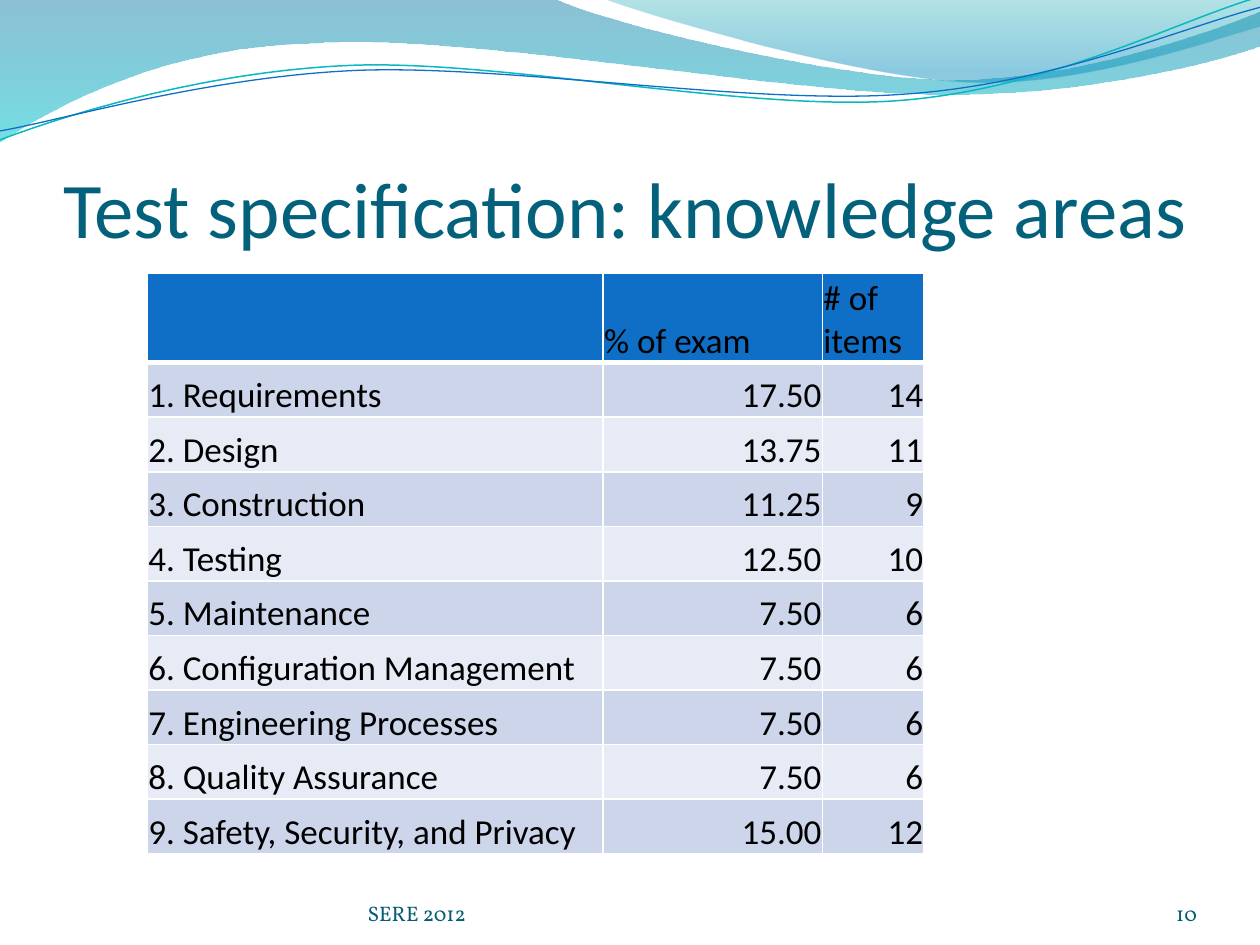
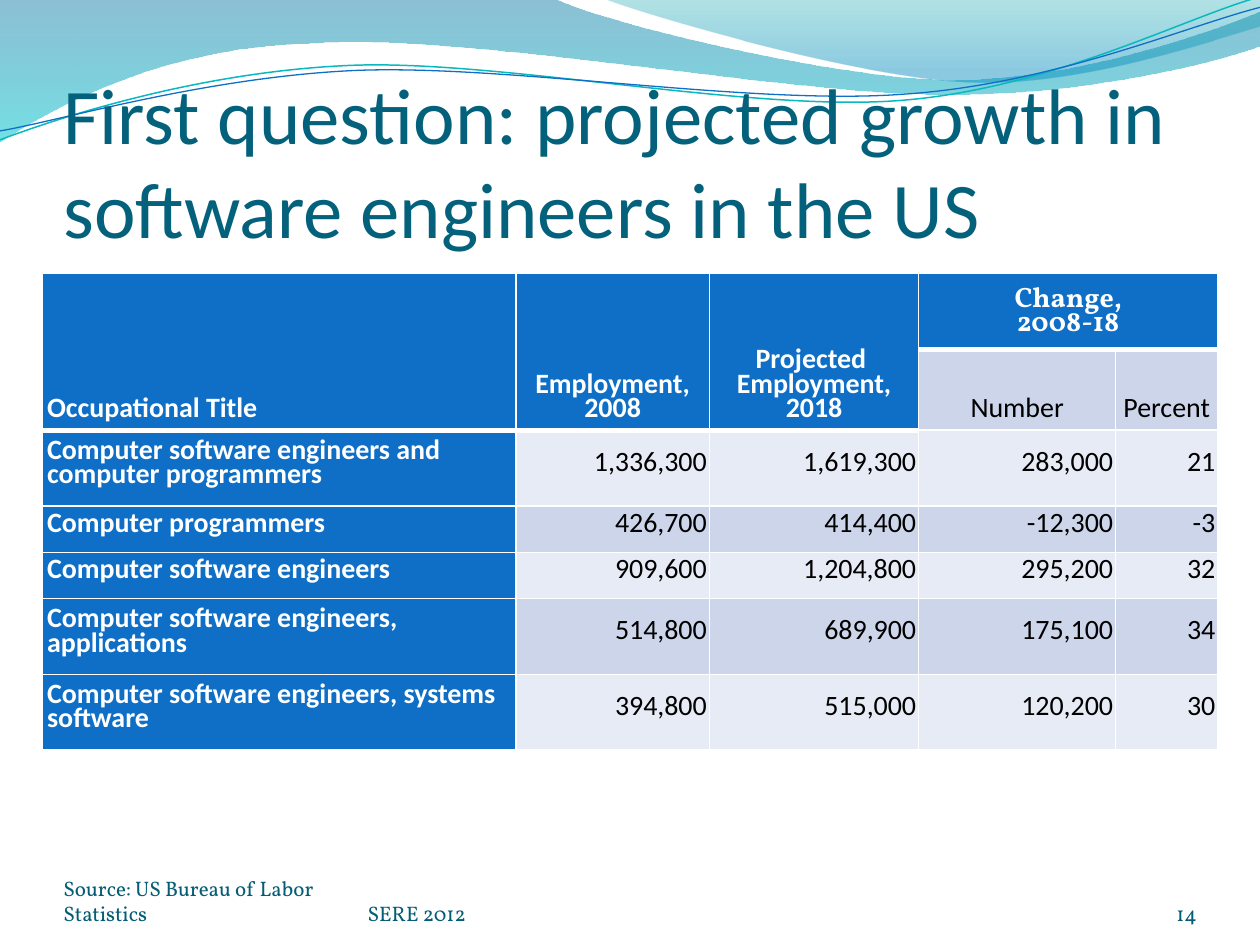
"""Build two exam slides: knowledge areas and projected job growth."""
import dataclasses

import lxml.etree
import pptx
import pptx.dml.color
import pptx.enum.text
import pptx.oxml.ns
import pptx.util

Cm, Pt = pptx.util.Cm, pptx.util.Pt
RGB = pptx.dml.color.RGBColor.from_string
ALIGN, ANCHOR = pptx.enum.text.PP_ALIGN, pptx.enum.text.MSO_ANCHOR
qn = pptx.oxml.ns.qn


@dataclasses.dataclass(frozen=True)
class Theme:
    sans: str = "Calibri"
    serif: str = "Vollkorn"
    title: str = "04617B"
    footer: str = "045D75"
    header: str = "0F6FC6"
    odd_band: str = "CCD5EA"
    even_band: str = "E7EBF5"
    teal: str = "0AB8BF"
    white: str = "FFFFFF"
    black: str = "000000"
    title_size: int = 45
    footer_size: int = 12


theme = Theme()


def write(frame, text, font, size, color, align=ALIGN.LEFT, bold=False):
    paragraph = frame.paragraphs[0]
    paragraph.text = text
    paragraph.alignment = align
    for run in paragraph.runs:
        run.font.name = font
        run.font.size = Pt(size)
        run.font.bold = bold
        run.font.color.rgb = RGB(color)
    return paragraph


def trace(slide, start, steps, closed):
    builder = slide.shapes.build_freeform(Cm(start[0]), Cm(start[1]))
    for step in steps:
        builder.add_line_segments([(Cm(x), Cm(y)) for x, y in zip(step[::2], step[1::2])], close=False)
    if closed:
        builder.add_line_segments([], close=True)
    outline = builder.convert_to_shape()
    outline.shadow.inherit = False
    segments = iter(list(outline._element.iter(qn("a:lnTo"))))
    for step in steps:
        segment = next(segments)
        if len(step) == 6:
            curve = lxml.etree.Element(qn("a:cubicBezTo"))
            segment.addprevious(curve)
            for part in (segment, next(segments), next(segments)):
                curve.append(part[0])
                part.getparent().remove(part)
    return outline


waves = [
    ((0, 0), [(11.18, -0.03), (12.09, 0.43, 16.87, 1.6, 19.25, 1.6),
              (21.67, 1.6, 24.33, 0.66, 25.4, 0.23), (25.43, 0.91),
              (24.97, 1.12, 22.1, 1.93, 18.95, 1.9), (15.8, 1.9, 9.7, 0.71, 6.53, 0.86),
              (3.28, 0.91, 1.17, 2.11, -0.03, 2.87), (0, 0)],
     [(0, "0074A1", 45), (1, "00C6CF", 55)]),
    ((12.17, -0.03), [(12.93, 0.28, 17.32, 1.57, 19.53, 1.65),
                      (21.74, 1.75, 24.41, 0.81, 25.4, 0.53), (25.4, 0), (12.17, -0.03)],
     [(0, "00A1A9", 30), (0.8, "008BBF", 45)]),
]
ripples = [
    ((0, 2.82), [(1.22, 2.36, 4.01, 1.45, 7.04, 1.32), (10.03, 1.19, 15.06, 2.26, 18.11, 2.03),
                 (21.16, 1.8, 23.83, 0.38, 25.35, -0.05)], theme.teal, 0.85),
    ((0, 2.64), [(1.19, 2.44, 4.17, 1.55, 7.19, 1.42), (10.24, 1.3, 15.16, 2.13, 18.21, 1.9),
                 (21.23, 1.7, 23.9, 0.53, 25.4, 0.15)], theme.header, 0.75),
]

knowledge_areas = dict(
    title="Test specification: knowledge areas", source="", number="10",
    left=2.97, columns=[9.19, 4.42, 2.05], heights=[1.8] + [1.1] * 9,
    size=20, spaced=False, titled_rows=False, merges=[],
    header_align=ALIGN.LEFT, body_anchor=ANCHOR.BOTTOM,
    label_insets=(0.02, 0.02, 0.02, 0), value_insets=(0.02, 0.02, 0.02, 0),
    rows=[
        ("", "% of exam", "# of items"),
        ("1. Requirements", "17.50", "14"),
        ("2. Design", "13.75", "11"),
        ("3. Construction", "11.25", "9"),
        ("4. Testing", "12.50", "10"),
        ("5. Maintenance", "7.50", "6"),
        ("6. Configuration Management", "7.50", "6"),
        ("7. Engineering Processes", "7.50", "6"),
        ("8. Quality Assurance", "7.50", "6"),
        ("9. Safety, Security, and Privacy", "15.00", "12"),
    ])
job_growth = dict(
    title="First question: projected growth in software engineers in the US",
    source="Source: US Bureau of Labor Statistics", number="14",
    left=0.85, columns=[9.55, 3.9, 4.22, 3.97, 2.06],
    heights=[1.53, 1.53, 1.53, 0.93, 0.93, 1.53, 1.53],
    size=16, spaced=True, titled_rows=True,
    merges=[(0, 0, 1, 0), (0, 1, 1, 1), (0, 2, 1, 2), (0, 3, 0, 4)],
    header_align=ALIGN.CENTER, body_anchor=ANCHOR.MIDDLE,
    label_insets=(0.1, 0.05, 0.1, 0.1), value_insets=(0.05, 0, 0.05, 0.05),
    rows=[
        ("Occupational Title", "Employment, 2008", "Projected \nEmployment, 2018", "Change,\n2008-18", ""),
        ("", "", "", "Number", "Percent"),
        ("Computer software engineers and computer programmers", "1,336,300", "1,619,300", "283,000", "21"),
        ("Computer programmers", "426,700", "414,400", "-12,300", "-3"),
        ("Computer software engineers", "909,600", "1,204,800", "295,200", "32"),
        ("Computer software engineers, applications", "514,800", "689,900", "175,100", "34"),
        ("Computer software engineers, systems software", "394,800", "515,000", "120,200", "30"),
    ])

deck = pptx.Presentation()
deck.slide_width, deck.slide_height = Cm(25.4), Cm(19.05)

for topic in (knowledge_areas, job_growth):
    slide = deck.slides.add_slide(deck.slide_layouts[6])

    for start, steps, stops in waves:
        wave = trace(slide, start, steps, True)
        wave.line.fill.background()
        wave.fill.gradient()
        wave.fill.gradient_angle = 270
        for stop, (position, color, _) in zip(wave.fill.gradient_stops, stops):
            stop.position = position
            stop.color.rgb = RGB(color)
        tints = wave._element.spPr.iter(qn("a:srgbClr"))
        for tint, (_, _, opacity) in zip(tints, stops):
            lxml.etree.SubElement(tint, qn("a:alpha"), val=str(opacity * 1000))
    for start, steps, color, width in ripples:
        ripple = trace(slide, start, steps, False)
        ripple.fill.background()
        ripple.line.color.rgb = RGB(color)
        ripple.line.width = Pt(width)

    title_style = (theme.sans, theme.title_size, theme.title)
    footer_style = (theme.serif, theme.footer_size, theme.footer)
    captions = [
        (topic["title"], (1.28, 1.95, 23.06, 3.18), 0.13, title_style, ALIGN.LEFT),
        (topic["source"], (1.28, 17.65, 5.92, 1.02), 0, footer_style, ALIGN.LEFT),
        ("SERE 2012", (7.41, 17.65, 9.32, 1.02), 0, footer_style, ALIGN.LEFT),
        (topic["number"], (22.02, 17.65, 2.11, 1.02), 0, footer_style, ALIGN.RIGHT),
    ]
    for text, box, top_inset, style, align in captions:
        if not text:
            continue
        frame = slide.shapes.add_textbox(*map(Cm, box)).text_frame
        frame.word_wrap = True
        frame.vertical_anchor = ANCHOR.BOTTOM
        frame.margin_left = frame.margin_right = frame.margin_bottom = 0
        frame.margin_top = Cm(top_inset)
        write(frame, text, *style, align)

    rows, columns, heights = topic["rows"], topic["columns"], topic["heights"]
    grid = slide.shapes.add_table(len(rows), len(columns), Cm(topic["left"]), Cm(5.51),
                                  Cm(sum(columns)), Cm(sum(heights))).table
    grid.first_row = grid.horz_banding = False
    for column, width in zip(grid.columns, columns):
        column.width = Cm(width)
    for row, height in zip(grid.rows, heights):
        row.height = Cm(height)
    for top, left, bottom, right in topic["merges"]:
        grid.cell(top, left).merge(grid.cell(bottom, right))

    header_cells = {(0, c) for c in range(len(columns))}
    header_cells |= {(r, c) for top, left, bottom, right in topic["merges"]
                     for r in range(top, bottom + 1) for c in range(left, right + 1)}
    heading_rows = 1 + max(r for r, _ in header_cells)
    for r, row in enumerate(rows):
        for c, text in enumerate(row):
            cell = grid.cell(r, c)
            is_header = (r, c) in header_cells
            is_blue = is_header or (topic["titled_rows"] and c == 0)
            in_heading = r < heading_rows
            edges = {"L": 1, "R": 1, "T": 3 if (r - 1, c) in header_cells else 1, "B": 3 if is_header else 1}
            for side, width in edges.items():
                edge = lxml.etree.SubElement(cell._tc.get_or_add_tcPr(), qn("a:ln" + side), w=str(Pt(width)))
                paint = lxml.etree.SubElement(edge, qn("a:solidFill"))
                lxml.etree.SubElement(paint, qn("a:srgbClr"), val=theme.white)
            cell.fill.solid()
            band = theme.odd_band if r % 2 else theme.even_band
            cell.fill.fore_color.rgb = RGB(theme.header if is_blue else band)
            cell.vertical_anchor = ANCHOR.BOTTOM if in_heading else topic["body_anchor"]
            insets = topic["label_insets"] if in_heading or c == 0 else topic["value_insets"]
            cell.margin_left, cell.margin_top, cell.margin_right, cell.margin_bottom = map(Cm, insets)
            if not text:
                continue
            align = ALIGN.LEFT if c == 0 else topic["header_align"] if in_heading else ALIGN.RIGHT
            emphasised = is_blue and topic["titled_rows"]
            font = theme.serif if text.startswith("Change") else theme.sans
            paragraph = write(cell.text_frame, text, font, topic["size"],
                              theme.white if emphasised else theme.black, align, emphasised)
            if topic["spaced"]:
                paragraph.line_spacing = Pt(14)
                paragraph.space_before = paragraph.space_after = Pt(6)

deck.save("out.pptx")
